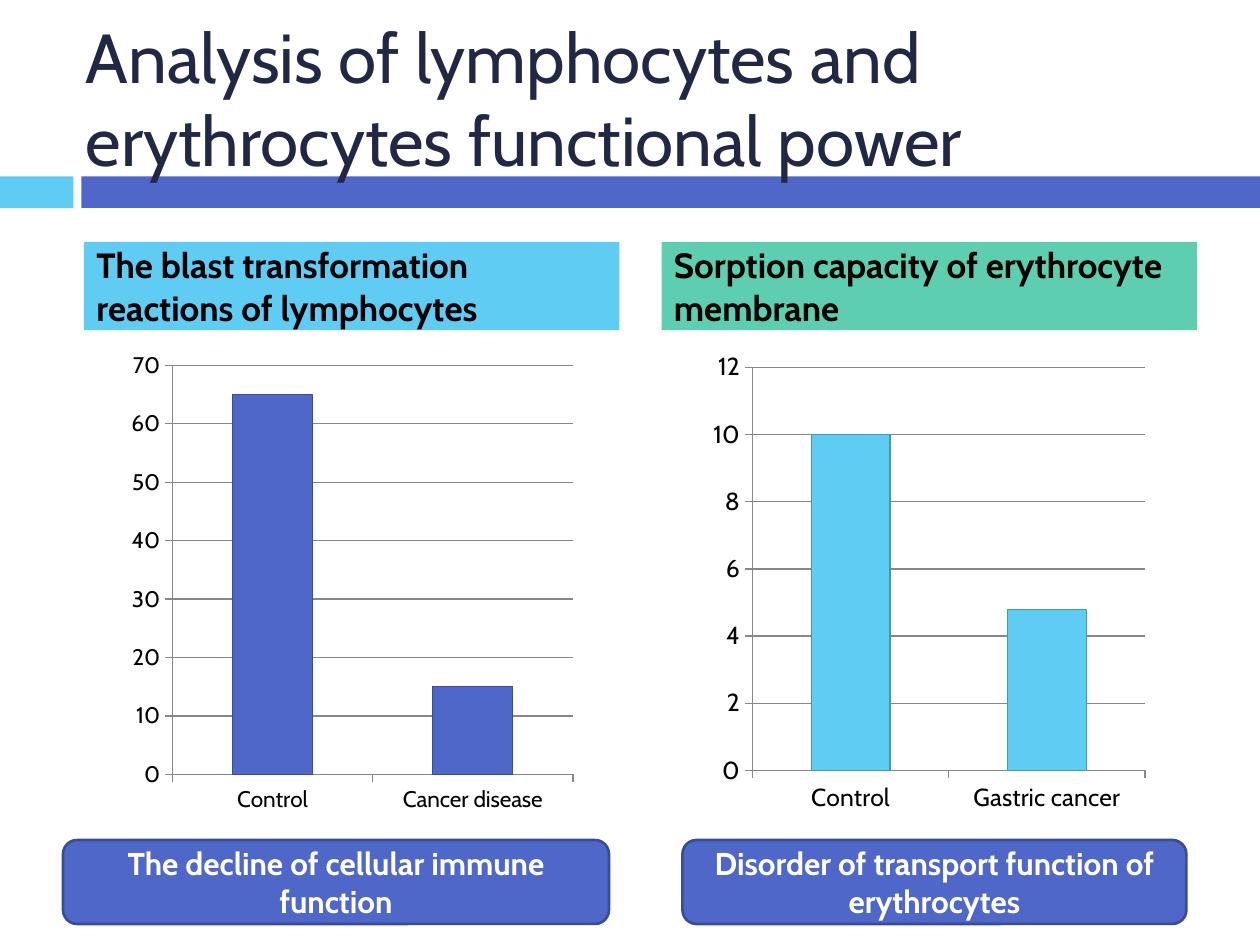
"""Build a slide comparing lymphocyte and erythrocyte function in two column charts."""
from dataclasses import dataclass
from typing import Optional

from pptx import Presentation
from pptx.chart import data as chart_data
from pptx.dml.color import RGBColor
from pptx.enum import chart as charts, shapes, text
from pptx.util import Pt

FONT = "Cabin"
COLORS = {
    "sky": "5ECCF3", "blue": "4E67C8", "green": "5DCEAF", "navy": "212745",
    "black": "000000", "white": "FFFFFF", "edge": "3A4C94", "sky_edge": "3D9ABB",
    "axis": "878787",
}


@dataclass
class Frame:
    left: float
    top: float
    width: float
    height: float

    def points(self) -> tuple:
        """Return the position and size as lengths."""
        return Pt(self.left), Pt(self.top), Pt(self.width), Pt(self.height)


@dataclass
class Label:
    words: str
    frame: Frame
    size: float
    color: str
    fill: Optional[str] = None
    line: Optional[str] = None
    preset: shapes.MSO_SHAPE = shapes.MSO_SHAPE.RECTANGLE
    bold: bool = True
    align: text.PP_ALIGN = text.PP_ALIGN.LEFT
    before: float = 0


@dataclass
class Columns:
    frame: Frame
    categories: tuple
    values: tuple
    size: float
    top_value: float
    step: float
    fill: str
    line: str


def rgb(name: str) -> RGBColor:
    """Look up a named colour."""
    return RGBColor.from_string(COLORS[name])


def apply(target, values: dict) -> None:
    """Set every attribute in the dict on the target."""
    for name, value in values.items():
        setattr(target, name, value)


def paint(form, fill: Optional[str], line: Optional[str], weight: float) -> None:
    """Set the fill and outline, or remove them where no colour is given."""
    for part, color in ((form.fill, fill), (form.line.fill, line)):
        if color:
            part.solid()
            part.fore_color.rgb = rgb(color)
        else:
            part.background()
    if line:
        form.line.width = Pt(weight)


def style_font(font, size: float, color: str, bold: bool = False) -> None:
    """Apply the slide typeface with a size, weight and colour."""
    apply(font, {"name": FONT, "size": Pt(size), "bold": bold})
    font.color.rgb = rgb(color)


def add_bar(page, frame: Frame, fill: str, line: Optional[str] = None,
            preset: shapes.MSO_SHAPE = shapes.MSO_SHAPE.RECTANGLE):
    """Draw a flat preset shape."""
    box = page.shapes.add_shape(preset, *frame.points())
    box.shadow.inherit = False
    paint(box, fill, line, 1.5)
    return box


def add_label(page, label: Label) -> None:
    """Draw a text box or a filled shape holding one paragraph."""
    if label.fill:
        box = add_bar(page, label.frame, label.fill, label.line, label.preset)
    else:
        box = page.shapes.add_textbox(*label.frame.points())
    apply(box.text_frame, {"word_wrap": True, "vertical_anchor": text.MSO_ANCHOR.MIDDLE})
    para = box.text_frame.paragraphs[0]
    apply(para, {"alignment": label.align, "space_before": Pt(label.before)})
    span = para.add_run()
    span.text = label.words
    style_font(span.font, label.size, label.color, label.bold)


def add_columns(page, columns: Columns) -> None:
    """Draw a stacked column chart with one series."""
    table = chart_data.CategoryChartData()
    table.categories = columns.categories
    table.add_series("Series 1", columns.values)
    chart = page.shapes.add_chart(
        charts.XL_CHART_TYPE.COLUMN_STACKED, *columns.frame.points(), table).chart
    apply(chart, {"has_legend": False, "has_title": False})
    style_font(chart.font, columns.size, "black")
    plot = chart.plots[0]
    apply(plot, {"gap_width": 150, "overlap": 100, "vary_by_categories": False})
    paint(plot.series[0].format, columns.fill, columns.line, 0.75)
    apply(chart.value_axis, {
        "minimum_scale": 0, "maximum_scale": columns.top_value,
        "major_unit": columns.step, "has_major_gridlines": True})
    for axis in (chart.category_axis, chart.value_axis):
        apply(axis, {"major_tick_mark": charts.XL_TICK_MARK.OUTSIDE,
                     "minor_tick_mark": charts.XL_TICK_MARK.NONE})
        axis.format.line.color.rgb = rgb("axis")
        axis.format.line.width = Pt(0.75)
    grid = chart.value_axis.major_gridlines.format.line
    grid.color.rgb = rgb("axis")
    grid.width = Pt(0.75)


def heading(words: str, left: float, fill: str) -> Label:
    """Describe a chart heading."""
    return Label(words, Frame(left, 138.24, 306, 50.4), 20, "black", fill, before=7)


def conclusion(words: str, left: float, width: float) -> Label:
    """Describe a rounded conclusion box."""
    return Label(words, Frame(left, 480, width, 48), 18, "white", "blue", "edge",
                 shapes.MSO_SHAPE.ROUNDED_RECTANGLE, align=text.PP_ALIGN.CENTER)


def main() -> None:
    """Build and save the slide."""
    deck = Presentation()
    apply(deck, {"slide_width": Pt(720), "slide_height": Pt(540)})
    page = deck.slides.add_slide(deck.slide_layouts[6])
    add_bar(page, Frame(0, 100.8, 42, 18), "sky")
    add_bar(page, Frame(46.5, 100.8, 673.5, 18), "blue")
    labels = (
        Label("Analysis of lymphocytes and erythrocytes functional power",
              Frame(42, 21.6, 642, 68.4), 39.6, "navy", bold=False),
        heading("The blast transformation reactions of lymphocytes", 48, "sky"),
        heading("Sorption capacity of erythrocyte membrane", 378, "green"),
        conclusion("The decline of cellular immune function", 36, 312),
        conclusion("Disorder of transport function of erythrocytes", 390, 288),
    )
    for label in labels:
        add_label(page, label)
    for columns in (
        Columns(Frame(69.84, 195.84, 262.8, 274.32), ("Control", "Cancer disease"),
                (65, 15), 12.9, 70, 10, "blue", "edge"),
        Columns(Frame(402.48, 195.84, 257.04, 274.32), ("Control", "Gastric cancer"),
                (10, 4.8), 14.1, 12, 2, "sky", "sky_edge"),
    ):
        add_columns(page, columns)
    deck.save("out.pptx")


if __name__ == "__main__":
    main()
